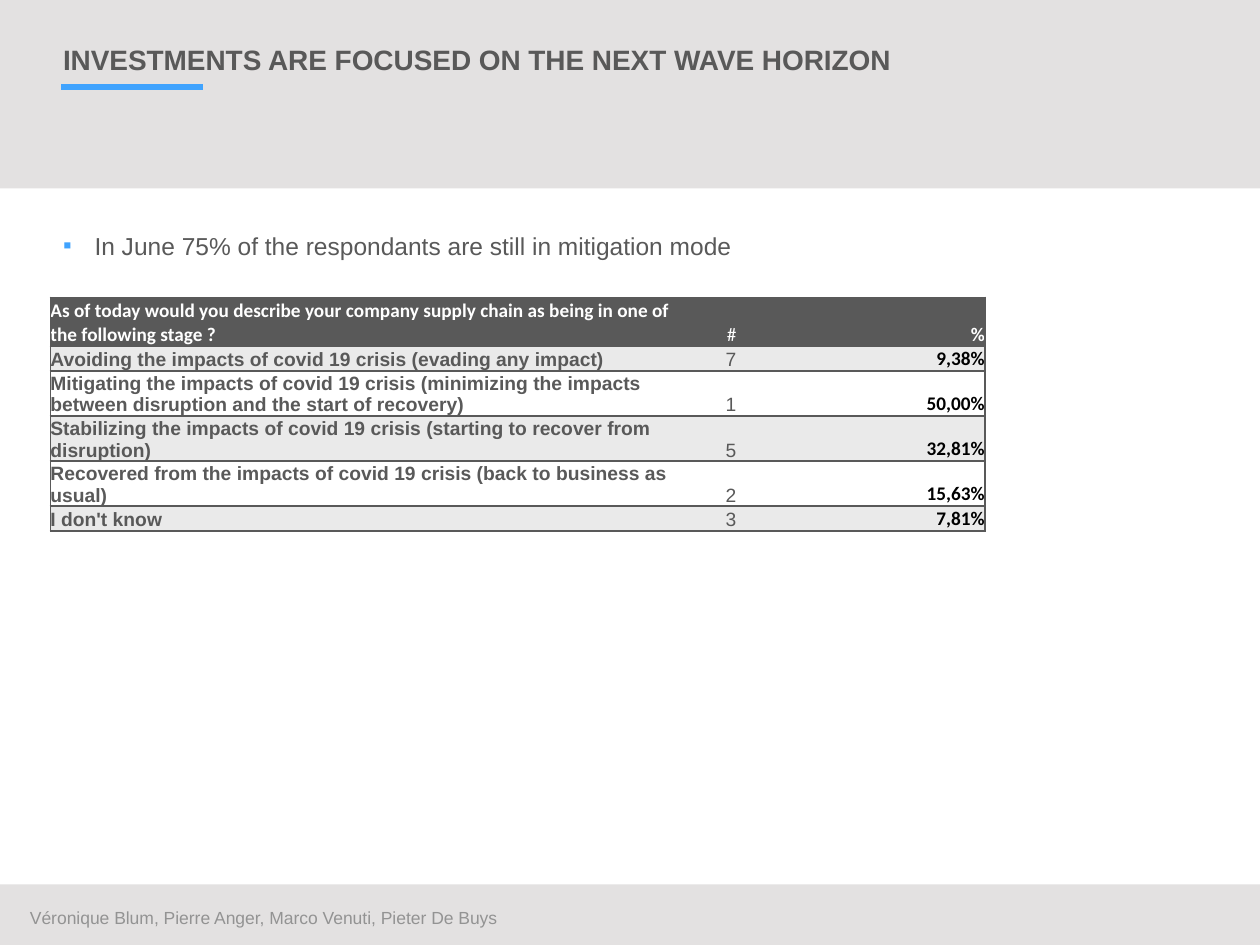
from dataclasses import dataclass

from lxml import etree
from pptx import Presentation
from pptx.dml.color import RGBColor
from pptx.enum.shapes import MSO_CONNECTOR, MSO_SHAPE
from pptx.enum.text import MSO_ANCHOR, MSO_AUTO_SIZE, PP_ALIGN
from pptx.oxml.ns import qn
from pptx.util import Pt

LEFT, RIGHT = PP_ALIGN.LEFT, PP_ALIGN.RIGHT
TOP, MIDDLE, BOTTOM = MSO_ANCHOR.TOP, MSO_ANCHOR.MIDDLE, MSO_ANCHOR.BOTTOM
NO_AUTOFIT = MSO_AUTO_SIZE.NONE
RECTANGLE = MSO_SHAPE.RECTANGLE
STRAIGHT = MSO_CONNECTOR.STRAIGHT

DARK, BLUE, BAND_GREY, FOOTER_GREY = "595959", "40A3FE", "E3E1E1", "939393"
ROW_GREY, WHITE, BLACK = "EAEAEA", "FFFFFF", "000000"

SLIDE_WIDTH, SLIDE_HEIGHT = 720, 540
COLUMN_WIDTHS = (365, 27, 142)


@dataclass
class Band:
    top: float
    height: float


@dataclass
class StageRow:
    label: str
    count: str
    share: str
    height: float


BANDS = (Band(0, 107.7), Band(505.4, 34.6))

HEADER = StageRow(
    "As of today would you describe your company supply chain as being in one of the following stage ?",
    "#", "%", 28)
STAGES = (
    StageRow("Avoiding the impacts of covid 19 crisis (evading any impact)", "7", "9,38%", 14),
    StageRow("Mitigating the impacts of covid 19 crisis (minimizing the impacts between disruption "
             "and the start of recovery)", "1", "50,00%", 25.8),
    StageRow("Stabilizing the impacts of covid 19 crisis (starting to recover from disruption)",
             "5", "32,81%", 25.8),
    StageRow("Recovered from the impacts of covid 19 crisis (back to business as usual)",
             "2", "15,63%", 25.8),
    StageRow("I don't know", "3", "7,81%", 14.2),
)


def rgb(color: str) -> RGBColor:
    return RGBColor.from_string(color)


def write_text(frame, text: str, *, size: float, color: str, font: str = "Arial",
               bold: bool = False, align=LEFT, anchor=TOP):
    frame.word_wrap = True
    frame.vertical_anchor = anchor
    paragraph = frame.paragraphs[0]
    paragraph.alignment = align
    run = paragraph.add_run()
    run.text = text
    run.font.size = Pt(size)
    run.font.name = font
    run.font.bold = bold
    run.font.color.rgb = rgb(color)
    return paragraph


def place(shape, left: float, top: float, width: float, height: float) -> None:
    shape.left, shape.top = Pt(left), Pt(top)
    shape.width, shape.height = Pt(width), Pt(height)


def draw_band(slide, band: Band) -> None:
    shape = slide.shapes.add_shape(RECTANGLE, 0, Pt(band.top), Pt(SLIDE_WIDTH), Pt(band.height))
    shape.shadow.inherit = False
    shape.fill.solid()
    shape.fill.fore_color.rgb = rgb(BAND_GREY)
    shape.line.fill.background()


def draw_title_rule(slide) -> None:
    rule = slide.shapes.add_connector(STRAIGHT, Pt(35), Pt(49.7), Pt(116), Pt(49.7))
    rule.line.color.rgb = rgb(BLUE)
    rule.line.width = Pt(3)
    etree.SubElement(rule._element.spPr, qn("a:effectLst"))


def draw_footer(slide) -> None:
    box = slide.shapes.add_textbox(Pt(10), Pt(514.8), Pt(331), Pt(19.4))
    write_text(box.text_frame, "Véronique Blum, Pierre Anger, Marco Venuti, Pieter De Buys",
               size=10, color=FOOTER_GREY)


def fill_title(slide) -> None:
    title = slide.shapes.title
    place(title, 28.8, 20.2, 620.6, 29.5)
    title.text_frame.auto_size = NO_AUTOFIT
    paragraph = write_text(title.text_frame, "INVESTMENTS ARE FOCUSED ON THE NEXT WAVE HORIZON",
                           size=16, color=DARK, bold=True, anchor=MIDDLE)
    paragraph.line_spacing = 0.9
    slide.shapes._spTree.append(title._element)


def fill_body(slide) -> None:
    body = slide.placeholders[1]
    place(body, 28.8, 128.2, 621.4, 311)
    body.text_frame.auto_size = NO_AUTOFIT
    paragraph = write_text(body.text_frame,
                           "In June 75% of the respondants are still in mitigation mode",
                           size=14, color=DARK)
    paragraph.space_before = Pt(10)
    properties = paragraph._p.get_or_add_pPr()
    properties.set("marL", str(Pt(18)))
    properties.set("indent", str(-Pt(18)))
    bullet_color = etree.SubElement(properties, qn("a:buClr"))
    etree.SubElement(bullet_color, qn("a:srgbClr"), val=BLUE)
    etree.SubElement(properties, qn("a:buFont"), typeface="Arial")
    etree.SubElement(properties, qn("a:buChar"), char="▪")
    slide.shapes._spTree.append(body._element)


def set_borders(cell, visible_sides: str) -> None:
    properties = cell._tc.get_or_add_tcPr()
    for side in "LRTB":
        line = etree.SubElement(properties, qn(f"a:ln{side}"), w=str(Pt(1)))
        if side in visible_sides:
            fill = etree.SubElement(line, qn("a:solidFill"))
            etree.SubElement(fill, qn("a:srgbClr"), val=DARK)
        else:
            etree.SubElement(line, qn("a:noFill"))


def format_cell(cell, text: str, fill: str, sides: str, **text_format) -> None:
    cell.margin_left = cell.margin_right = cell.margin_top = cell.margin_bottom = 0
    set_borders(cell, sides)
    cell.fill.solid()
    cell.fill.fore_color.rgb = rgb(fill)
    write_text(cell.text_frame, text, size=11, **text_format)
    cell.vertical_anchor = BOTTOM


def draw_stage_table(slide) -> None:
    rows = (HEADER, *STAGES)
    frame = slide.shapes.add_table(len(rows), len(COLUMN_WIDTHS), Pt(28.8), Pt(169.9),
                                   Pt(sum(COLUMN_WIDTHS)), Pt(sum(row.height for row in rows)))
    table = frame.table
    table.first_row = table.horz_banding = False
    for column, width in zip(table.columns, COLUMN_WIDTHS):
        column.width = Pt(width)
    for index, row in enumerate(rows):
        table.rows[index].height = Pt(row.height)
        is_header = index == 0
        fill = DARK if is_header else (ROW_GREY if index % 2 else WHITE)
        color = WHITE if is_header else DARK
        font = "Calibri" if is_header else "Arial"
        label, count, share = table.rows[index].cells
        format_cell(label, row.label, fill, "LTB", color=color, font=font, bold=True)
        format_cell(count, row.count, fill, "TB", color=color, font=font, align=RIGHT)
        format_cell(share, row.share, fill, "RTB", color=WHITE if is_header else BLACK,
                    font="Calibri", bold=True, align=RIGHT)


def main() -> None:
    presentation = Presentation()
    presentation.slide_width, presentation.slide_height = Pt(SLIDE_WIDTH), Pt(SLIDE_HEIGHT)
    slide = presentation.slides.add_slide(presentation.slide_layouts[1])
    for band in BANDS:
        draw_band(slide, band)
    draw_title_rule(slide)
    draw_footer(slide)
    fill_title(slide)
    fill_body(slide)
    draw_stage_table(slide)
    presentation.save("out.pptx")


if __name__ == "__main__":
    main()
